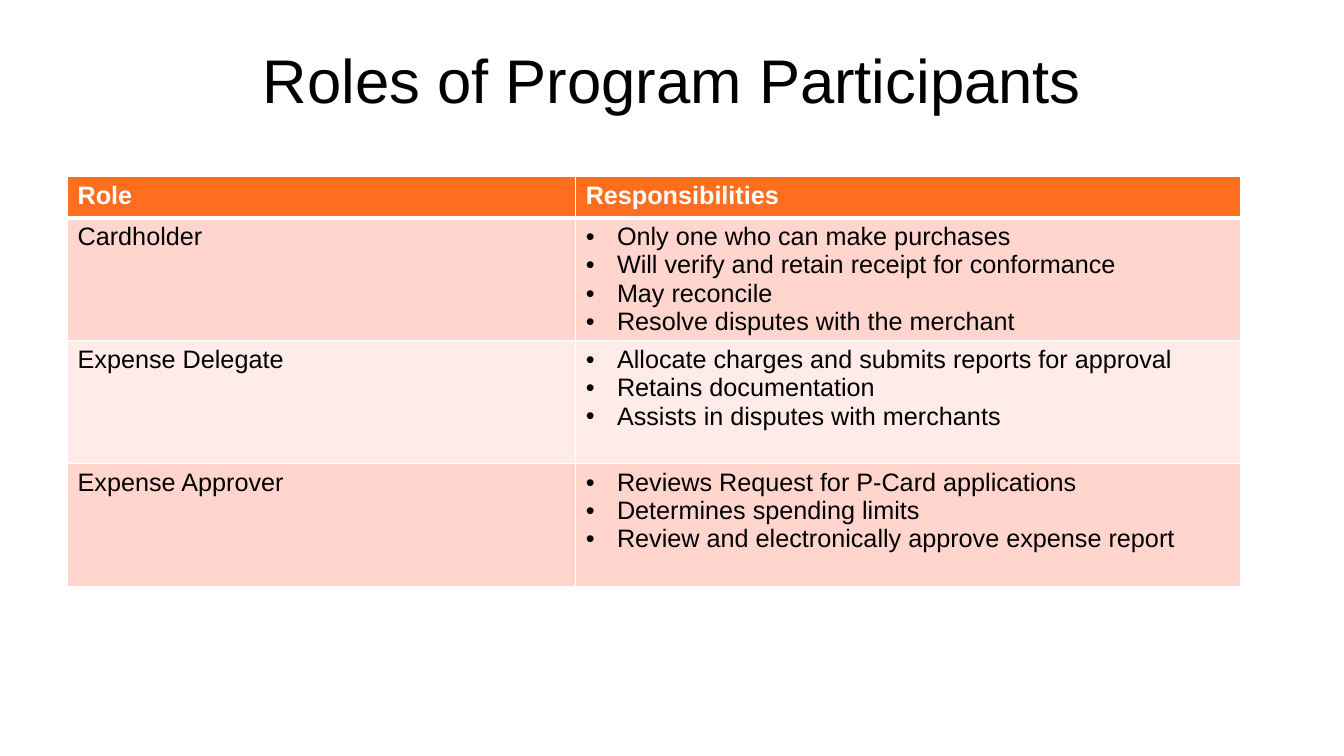
from lxml.etree import SubElement
from pptx import Presentation
from pptx.dml.color import RGBColor
from pptx.enum.text import MSO_ANCHOR, PP_ALIGN
from pptx.oxml.ns import qn
from pptx.util import Inches, Pt

FONT = "Arial"
WHITE, BLACK, ORANGE = "FFFFFF", "000000", "FF6E1E"
BANDS = ["FFD5CD", "FFEBE8"]
HEADS = ["Role", "Responsibilities"]
ROLES = [
    ("Cardholder", [
        "Only one who can make purchases",
        "Will verify and retain receipt for conformance",
        "May reconcile",
        "Resolve disputes with the merchant",
    ]),
    ("Expense Delegate", [
        "Allocate charges and submits reports for approval",
        "Retains documentation",
        "Assists in disputes with merchants",
    ]),
    ("Expense Approver", [
        "Reviews Request for P-Card applications",
        "Determines spending limits",
        "Review and electronically approve expense report",
    ]),
]
WIDTHS = [5.04, 6.59]
HEAD_H, ROW_H = 0.41, 1.22


def rgb(code):
    return RGBColor.from_string(code)


def style(para, size, color, bold=False):
    font = para.font
    font.name, font.size, font.bold = FONT, Pt(size), bold
    font.color.rgb = rgb(color)


def add_bullet(para):
    props = para._p.get_or_add_pPr()
    props.set("marL", str(Inches(0.31)))
    props.set("indent", str(Inches(-0.31)))
    SubElement(props, qn("a:buFont")).set("typeface", FONT)
    SubElement(props, qn("a:buChar")).set("char", "•")


def add_edges(cell, top, bottom):
    """Draw white borders; top and bottom are widths in points."""
    props = cell._tc.get_or_add_tcPr()
    for side, width in zip("LRTB", (1, 1, top, bottom)):
        line = SubElement(props, qn(f"a:ln{side}"), w=str(Pt(width)))
        fill = SubElement(line, qn("a:solidFill"))
        SubElement(fill, qn("a:srgbClr"), val=WHITE)


def fill_cell(cell, lines, fill, color, bold=False, bullets=False):
    cell.fill.solid()
    cell.fill.fore_color.rgb = rgb(fill)
    frame = cell.text_frame
    frame.text = "\n".join(lines)
    for para in frame.paragraphs:
        if bullets:
            add_bullet(para)
        style(para, 18, color, bold)


def set_title(slide, text):
    title = slide.shapes.title
    title.left, title.top = Inches(0.67), Inches(0.3)
    title.width, title.height = Inches(12), Inches(1.25)
    frame = title.text_frame
    frame.text = text
    frame.vertical_anchor = MSO_ANCHOR.TOP
    frame.margin_top = Inches(0.12)
    para = frame.paragraphs[0]
    para.alignment = PP_ALIGN.CENTER
    style(para, 44, BLACK)


def add_roles(slide):
    count = len(ROLES) + 1
    table = slide.shapes.add_table(
        count, len(HEADS), Inches(0.67), Inches(1.75),
        Inches(sum(WIDTHS)), Inches(HEAD_H + ROW_H * len(ROLES))).table
    for col, width in zip(table.columns, WIDTHS):
        col.width = Inches(width)
    for i, row in enumerate(table.rows):
        row.height = Inches(ROW_H if i else HEAD_H)
        for cell in row.cells:
            add_edges(cell, 3 if i == 1 else 1, 1 if i else 3)
    for j, head in enumerate(HEADS):
        fill_cell(table.cell(0, j), [head], ORANGE, WHITE, bold=True)
    for i, (role, duties) in enumerate(ROLES):
        band = BANDS[i % 2]
        fill_cell(table.cell(i + 1, 0), [role], band, BLACK)
        fill_cell(table.cell(i + 1, 1), duties, band, BLACK, bullets=True)


def main():
    deck = Presentation()
    deck.slide_width, deck.slide_height = Inches(13.33), Inches(7.5)
    slide = deck.slides.add_slide(deck.slide_layouts[5])
    set_title(slide, "Roles of Program Participants")
    add_roles(slide)
    deck.save("out.pptx")


if __name__ == "__main__":
    main()
